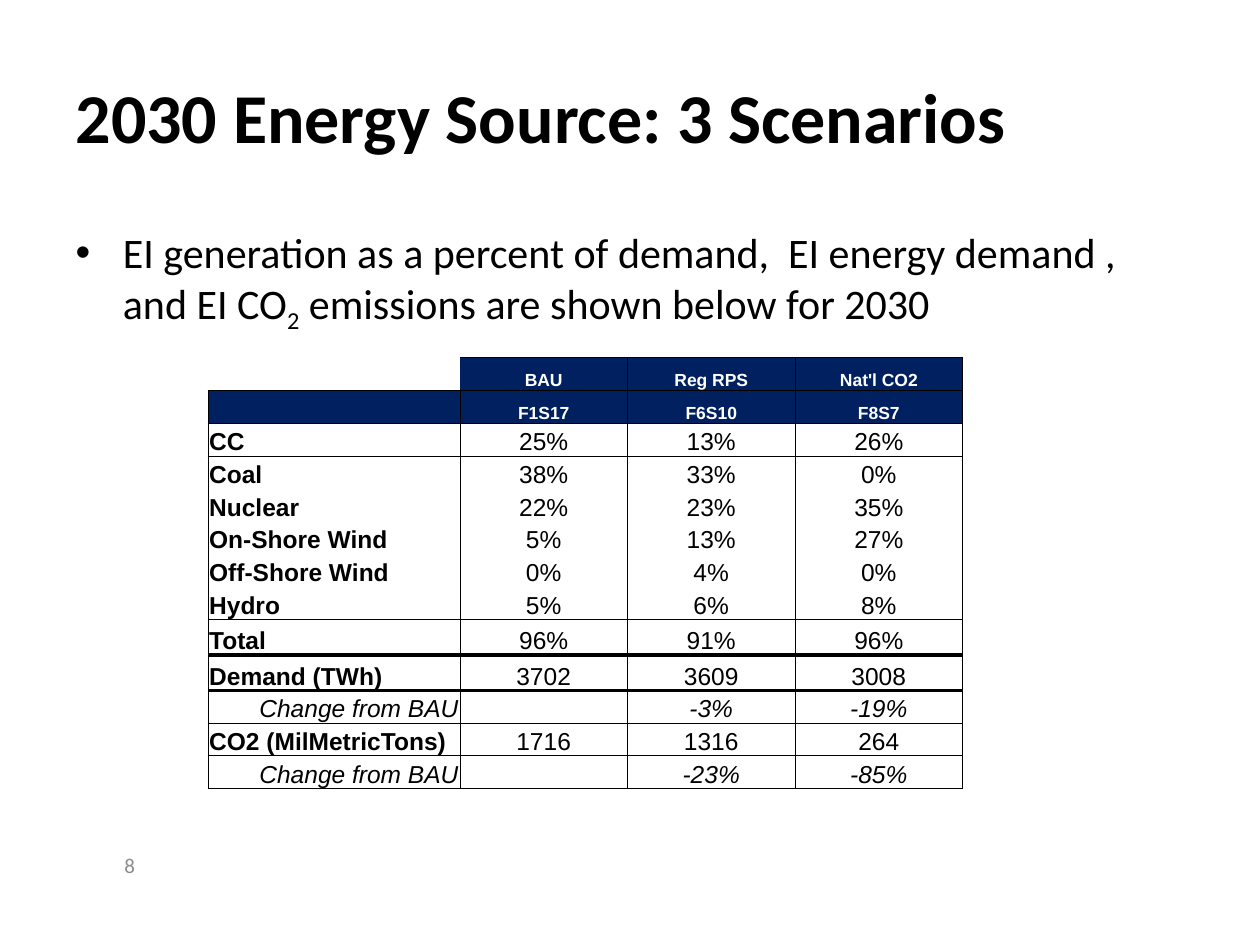
from lxml import etree
from pptx import Presentation
from pptx import util as u
from pptx.dml.color import RGBColor
from pptx.enum import text
from pptx.oxml import ns

BLACK = RGBColor(0x00, 0x00, 0x00)
WHITE = RGBColor(0xFF, 0xFF, 0xFF)
NAVY = RGBColor(0x00, 0x20, 0x60)
GREY = RGBColor(0x8C, 0x8C, 0x8C)
PLAIN_STYLE = "{2D5ABB26-0587-4C30-8999-92F81FD0307C}"

TITLE = "2030 Energy Source: 3 Scenarios"
BULLET = [
    ("EI generation as a percent of demand,  EI energy demand , and EI CO", None),
    ("2", "-25000"),
    (" emissions are shown below for 2030", None),
]
PAGE_NUMBER = "8"
HEADERS = [
    ("", "BAU", "Reg RPS", "Nat'l CO2"),
    ("", "F1S17", "F6S10", "F8S7"),
]
CHANGE = "Change from BAU"
FIGURES = [
    ("CC", "25%", "13%", "26%"),
    ("Coal", "38%", "33%", "0%"),
    ("Nuclear", "22%", "23%", "35%"),
    ("On-Shore Wind", "5%", "13%", "27%"),
    ("Off-Shore Wind", "0%", "4%", "0%"),
    ("Hydro", "5%", "6%", "8%"),
    ("Total", "96%", "91%", "96%"),
    ("Demand (TWh)", "3702", "3609", "3008"),
    (CHANGE, "", "-3%", "-19%"),
    ("CO2 (MilMetricTons)", "1716", "1316", "264"),
    (CHANGE, "", "-23%", "-85%"),
]
BLANK = ("",) * 4
ROWS = [("", *row, "") for row in [BLANK, *HEADERS, *FIGURES, BLANK]]
COLUMN_WIDTHS = [0.15, 2, 1.33, 1.33, 1.33, 0.18]
ROW_HEIGHT, TALL_HEIGHT = 0.26, 0.28
TALL_ROWS = (9, 10)
RULES = {1: 0.5, 2: 0.5, 3: 0.5, 9: 0.5, 10: 2, 12: 0.5, 14: 0.5}


def place(shape, left, top, width, height):
    shape.left, shape.top, shape.width, shape.height = map(
        u.Inches, (left, top, width, height))


def write(para, words, size, face, color, bold=False, italic=False):
    span = para.add_run()
    span.text = words
    span.font.color.rgb = color
    values = {"size": u.Pt(size), "name": face, "bold": bold, "italic": italic}
    for name, value in values.items():
        setattr(span.font, name, value)
    return span


def rule_width(line, column):
    first = 2 if line == 1 else 1
    return RULES.get(line) if first <= column <= 4 else None


def divider_width(line, row):
    inside = 2 <= row <= 13 and 1 <= line <= 5
    return 0.5 if inside or (row == 1 and line in (3, 4)) else None


def draw_borders(cell, row, column):
    edges = {
        "a:lnL": divider_width(column, row),
        "a:lnR": divider_width(column + 1, row),
        "a:lnT": rule_width(row, column),
        "a:lnB": rule_width(row + 1, column),
    }
    properties = cell._tc.get_or_add_tcPr()
    for tag, width in edges.items():
        if width:
            line = etree.SubElement(properties, ns.qn(tag), w=str(u.Pt(width)))
            fill = etree.SubElement(line, ns.qn("a:solidFill"))
            etree.SubElement(fill, ns.qn("a:srgbClr"), val=str(BLACK))


def fill_cell(cell, row, column, words):
    draw_borders(cell, row, column)
    header = (row == 1 and 2 <= column <= 4) or (row == 2 and 1 <= column <= 4)
    if header:
        cell.fill.solid()
        cell.fill.fore_color.rgb = NAVY
    else:
        cell.fill.background()
    cell.vertical_anchor = text.MSO_ANCHOR.BOTTOM
    for side, inset in {"left": 0.01, "right": 0.01, "top": 0.01, "bottom": 0}.items():
        setattr(cell, "margin_" + side, u.Inches(inset))
    para = cell.text_frame.paragraphs[0]
    if not words:
        etree.SubElement(para._p, ns.qn("a:endParaRPr"), sz="1000")
        return
    change = ROWS[row][1] == CHANGE
    if column > 1:
        para.alignment = text.PP_ALIGN.CENTER
    else:
        para.alignment = text.PP_ALIGN.RIGHT if change else text.PP_ALIGN.LEFT
    write(para, words, 10 if header else 14, "Arial", WHITE if header else BLACK,
          bold=header or (column == 1 and not change), italic=change)


def add_scenario_table(page):
    heights = [TALL_HEIGHT if row in TALL_ROWS else ROW_HEIGHT
               for row in range(len(ROWS))]
    sizes = map(u.Inches, (1.5, 2.58, sum(COLUMN_WIDTHS), sum(heights)))
    table = page.shapes.add_table(len(ROWS), len(COLUMN_WIDTHS), *sizes).table
    table.first_row = table.horz_banding = False
    table._tbl.tblPr.find(ns.qn("a:tableStyleId")).text = PLAIN_STYLE
    for column, width in zip(table.columns, COLUMN_WIDTHS):
        column.width = u.Inches(width)
    for row, height in zip(table.rows, heights):
        row.height = u.Inches(height)
    for row, values in enumerate(ROWS):
        for column, words in enumerate(values):
            fill_cell(table.cell(row, column), row, column, words)


def main():
    deck = Presentation()
    deck.slide_width, deck.slide_height = u.Inches(10), u.Inches(7.5)
    page = deck.slides.add_slide(deck.slide_layouts[1])

    title = page.shapes.title
    place(title, 0.5, 0.33, 9, 1.17)
    title.text_frame.vertical_anchor = text.MSO_ANCHOR.MIDDLE
    para = title.text_frame.paragraphs[0]
    para.alignment = text.PP_ALIGN.LEFT
    write(para, TITLE, 40, "Calibri", BLACK, bold=True)

    body = page.placeholders[1]
    place(body, 0.5, 1.75, 9, 4.73)
    para = body.text_frame.paragraphs[0]
    para.space_before = u.Pt(0)
    for words, baseline in BULLET:
        span = write(para, words, 24, "Calibri", BLACK)
        if baseline:
            span.font._element.set("baseline", baseline)

    add_scenario_table(page)

    number = page.shapes.add_textbox(0, 0, 0, 0)
    place(number, 0.42, 6.67, 0.75, 0.4)
    number.text_frame.word_wrap = True
    number.text_frame.vertical_anchor = text.MSO_ANCHOR.MIDDLE
    para = number.text_frame.paragraphs[0]
    para.alignment = text.PP_ALIGN.RIGHT
    write(para, PAGE_NUMBER, 12, "Calibri", GREY)

    deck.save("out.pptx")


if __name__ == "__main__":
    main()
